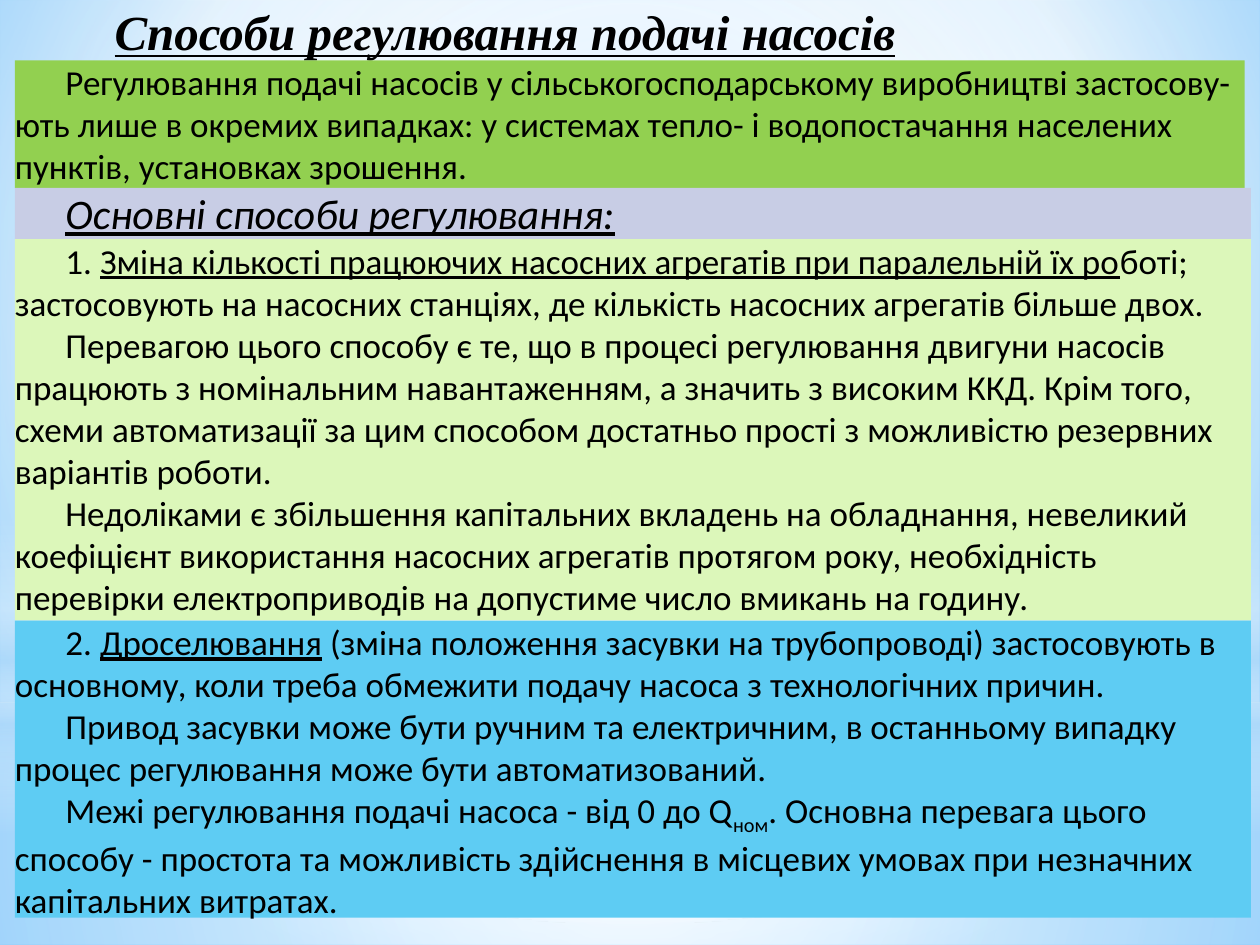
"""Build a slide on ways of regulating pump delivery, as stacked text panels."""
from lxml import etree
from pptx import Presentation
from pptx import util as u
from pptx.dml.color import RGBColor
from pptx.enum import shapes, text
from pptx.oxml import ns

THEME = {
    "ink": "000000", "body": "Calibri", "head": "Times New Roman",
    "title": 28, "lead": 24, "text": 20,
    "green": "92D050", "lilac": "C8CDE5", "lime": "DCF7BA", "blue": "5ECCF3",
    "white": "FFFFFF", "pale": "B4DCFA", "sky": "9ED5FF", "deep": "5BB9FF",
}

TITLE = [[("Способи регулювання подачі насосів", "biu")]]

INTRO = [[("Регулювання подачі насосів у сільськогосподарському виробництві застосову-ють лише в окремих випадках: у системах тепло- і водопостачання населених пунктів, установках зрошення.", "")]]

LEAD = [[("Основні способи регулювання:", "iu")]]

FIRST = [
    [("1. ", ""),
     ("Зміна кількості працюючих насосних агрегатів при паралельній їх ро", "u"),
     ("боті; застосовують на насосних станціях, де кількість насосних агрегатів більше двох.", "")],
    [("Перевагою цього способу є те, що в процесі регулювання двигуни насосів працюють з номінальним навантаженням, а значить з високим ККД. Крім того, схеми автоматизації за цим способом достатньо прості з можливістю резервних варіантів роботи.", "")],
    [("Недоліками є збільшення капітальних вкладень на обладнання, невеликий коефіцієнт використання насосних агрегатів протягом року, необхідність перевірки електроприводів на допустиме число вмикань на годину.", "")],
]

SECOND = [
    [("2. ", ""),
     ("Дроселювання", "u"),
     (" (зміна положення засувки на трубопроводі) застосовують в основному, коли треба обмежити подачу насоса з технологічних причин.", "")],
    [("Привод засувки може бути ручним та електричним, в останньому випадку процес регулювання може бути автоматизований.", "")],
    [("Межі регулювання подачі насоса - від 0 до Q", ""),
     ("ном", "s"),
     (". Основна перевага цього способу - простота та можливість здійснення в місцевих умовах при незначних капітальних витратах.", "")],
]

# width, height, fill, size, content
PANELS = [
    (24.79, 2.57, "green", "text", INTRO),
    (24.92, 1.03, "lilac", "lead", LEAD),
    (24.92, 7.69, "lime", "text", FIRST),
    (24.92, 5.99, "blue", "text", SECOND),
]
LEFT, TOP, INDENT = 0.3, 1.22, 1.02

MID = (50, 50, 50, 50)
BACK = [(0, "sky", 100), (60, "white", 100), (100, "deep", 100)]
GLOWS = [
    ("RECTANGLE", 14.17, 4.88, MID,
     [(0, "white", 91), (37, "white", 76), (100, "pale", 79)]),
    ("RECTANGLE", 0, 14.17, MID,
     [(0, "white", 89), (48, "white", 62), (100, "pale", 79)]),
    ("RECTANGLE", 10.46, 6.35, None,
     [(0, "white", 0), (29, "white", 30), (45, "pale", 40),
      (55, "white", 26), (65, "pale", 60), (100, "white", 0)]),
    ("OVAL", 4.45, 14.17, MID, [(0, "white", 100), (56, "white", 0)]),
]


def blend(root, stops, rim):
    old = next(root.iter(ns.qn("a:solidFill")))
    grad = etree.Element(ns.qn("a:gradFill"), rotWithShape="1")
    row = etree.SubElement(grad, ns.qn("a:gsLst"))
    for pos, hue, seen in stops:
        stop = etree.SubElement(row, ns.qn("a:gs"), pos=str(pos * 1000))
        tint = etree.SubElement(stop, ns.qn("a:srgbClr"), val=THEME[hue])
        if seen < 100:
            etree.SubElement(tint, ns.qn("a:alpha"), val=str(seen * 1000))
    if rim:
        way = etree.SubElement(grad, ns.qn("a:path"))
        way.set("path", "circle")
        etree.SubElement(way, ns.qn("a:fillToRect"),
                         {side: str(n * 1000) for side, n in zip("ltrb", rim)})
    else:
        etree.SubElement(grad, ns.qn("a:lin"), ang="5400000", scaled="0")
    old.getparent().replace(old, grad)


def block(slide, kind, left, top, wide, high):
    form = slide.shapes.add_shape(getattr(shapes.MSO_SHAPE, kind),
                                  u.Cm(left), u.Cm(top), u.Cm(wide), u.Cm(high))
    form.shadow.inherit = False
    form.line.fill.background()
    form.fill.solid()
    return form


def write(form, content, face, size, indent=0, wrap=True):
    frame = form.text_frame
    frame.margin_left = frame.margin_right = 0
    frame.margin_top = frame.margin_bottom = 0
    frame.vertical_anchor = text.MSO_ANCHOR.TOP
    frame.word_wrap = wrap
    frame.auto_size = text.MSO_AUTO_SIZE.SHAPE_TO_FIT_TEXT
    for n, parts in enumerate(content):
        para = frame.add_paragraph() if n else frame.paragraphs[0]
        para.alignment = text.PP_ALIGN.LEFT
        if indent:
            para._p.get_or_add_pPr().set("indent", str(u.Cm(indent)))
        for words, marks in parts:
            run = para.add_run()
            run.text = words
            font = run.font
            font.name, font.size = THEME[face], u.Pt(THEME[size])
            font.color.rgb = RGBColor.from_string(THEME["ink"])
            font.bold, font.italic = "b" in marks, "i" in marks
            font.underline = "u" in marks
            if "s" in marks:
                run._r.get_or_add_rPr().set("baseline", "-25000")


def main():
    deck = Presentation()
    deck.slide_width, deck.slide_height = u.Cm(25.4), u.Cm(19.05)
    slide = deck.slides.add_slide(deck.slide_layouts[6])
    slide.background.fill.solid()
    blend(slide._element, BACK, (20, 10, 20, 60))
    for kind, top, high, rim, stops in GLOWS:
        blend(block(slide, kind, 0, top, 25.4, high)._element, stops, rim)

    head = slide.shapes.add_textbox(u.Cm(2.31), u.Cm(0.03), u.Cm(15.9), u.Cm(1.19))
    write(head, TITLE, "head", "title", wrap=False)
    top = TOP
    for wide, high, hue, size, content in PANELS:
        panel = block(slide, "RECTANGLE", LEFT, top, wide, high)
        panel.fill.fore_color.rgb = RGBColor.from_string(THEME[hue])
        write(panel, content, "body", size, INDENT)
        top += high
    deck.save("out.pptx")


if __name__ == "__main__":
    main()
